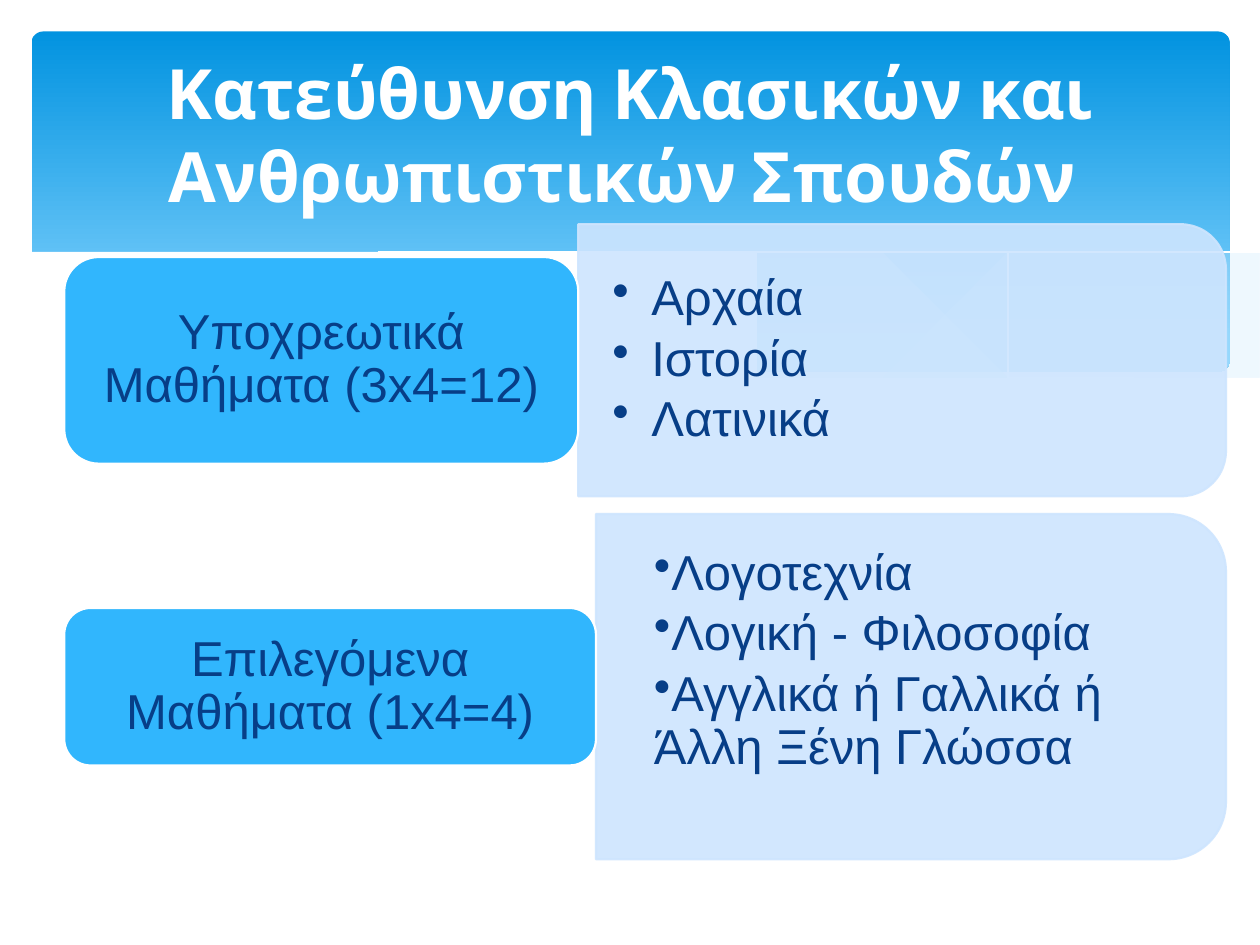
from dataclasses import dataclass

from lxml import etree
from pptx import Presentation
from pptx import util as u
from pptx.dml.color import RGBColor
from pptx.enum import shapes, text
from pptx.oxml.ns import qn

COLUMNS, ROWS = 10, 7.5
CELL = u.Inches(1)
WHITE, NAVY, BLUE, PALE, MIST = "FFFFFF", "073E87", "31B6FD", "CEE5FE", "C6E7FC"
CORNER_INSET = 0.048  # share of a panel's height kept clear of its round corners
LABEL_LEFT = 0.51

Point = tuple[float, float]
Curve = list[Point]


@dataclass
class Wave:
    """Smooth curves joined by straight lines; filled if a fill is given."""
    curves: list[Curve]
    fill: str | None = None
    opacity: int = 100


@dataclass
class Group:
    label: str
    label_height: float
    items: list[str]
    left: float
    top: float
    width: float
    height: float
    margin: float
    hanging: float
    bottom_inset: float = 0.14


WAVES = [
    Wave([[(9.76, 2), (9.21, 2.1), (8.61, 2.23), (7.79, 2.42), (6.61, 2.65)],
          [(6.61, 2.65), (7.19, 2.72), (7.69, 2.77), (8.24, 2.77), (8.72, 2.74),
           (9.21, 2.65), (9.76, 2.47)]], MIST, 29),
    Wave([[(8.93, 2.73), (8.07, 2.6), (7.06, 2.4), (6.29, 2.22), (5.55, 2.05),
           (4.89, 1.94), (4.2, 1.87), (3.61, 1.85), (2.86, 1.91)],
          [(2.86, 1.91), (3.62, 2.03), (4.49, 2.22), (5.3, 2.4), (6.18, 2.58),
           (6.95, 2.7), (7.61, 2.77), (8.28, 2.78), (8.93, 2.73)]], MIST, 40),
    Wave([[(3.09, 1.95), (3.53, 1.89), (4.16, 1.87), (4.89, 1.9), (5.82, 2),
           (6.65, 2.13), (7.6, 2.33), (8.31, 2.51), (9.07, 2.72)]]),
    Wave([[(6.13, 2.57), (6.95, 2.35), (7.76, 2.16), (8.66, 1.99), (9.24, 1.9),
           (9.75, 1.85)]]),
    Wave([[(9.77, 2.46), (9.3, 2.62), (8.75, 2.73), (8.09, 2.77), (7.26, 2.72),
           (6.48, 2.62), (5.55, 2.45), (4.47, 2.2), (3.65, 2.02), (2.92, 1.9),
           (2.3, 1.85), (1.77, 1.84), (1.19, 1.87), (0.67, 1.97), (0.23, 2.13)],
          [(0.23, 3.29), (9.77, 3.29)]], WHITE),
]

GROUPS = [
    Group("Υποχρεωτικά Μαθήματα (3x4=12)", 1.64, ["Αρχαία", "Ιστορία", "Λατινικά"],
          4.59, 1.78, 5.14, 2.16, margin=0.31, hanging=-0.31),
    Group("Επιλεγόμενα Μαθήματα (1x4=4)", 1.25,
          ["Λογοτεχνία", "Λογική - Φιλοσοφία", "Αγγλικά ή Γαλλικά ή Άλλη Ξένη Γλώσσα"],
          4.73, 4.08, 5, 2.74, margin=0.19, hanging=0, bottom_inset=0.54),
]


def cells(*lengths: float) -> list[int]:
    return [round(length * CELL) for length in lengths]


def paint(target, color: str, opacity: int = 100) -> None:
    """Give a fill one colour, see-through below 100."""
    target.solid()
    target.fore_color.rgb = RGBColor.from_string(color)
    if opacity < 100:
        choice = target._xPr.find(qn("a:solidFill"))[0]
        etree.SubElement(choice, qn("a:alpha"), val=str(opacity * 1000))


def smooth(curve: Curve, steps: int = 5) -> Curve:
    """Sample a Catmull-Rom spline through the points of a curve."""
    if len(curve) < 3:
        return curve
    padded = [curve[0], *curve, curve[-1]]
    samples = [curve[0]]
    for a, b, c, d in zip(padded, padded[1:], padded[2:], padded[3:]):
        for step in range(1, steps + 1):
            t = step / steps
            samples.append(tuple(
                b[i] + t / 2 * (c[i] - a[i]
                                + t * (2 * a[i] - 5 * b[i] + 4 * c[i] - d[i])
                                + t * t * (3 * b[i] - a[i] - 3 * c[i] + d[i]))
                for i in range(2)))
    return samples


def draw_wave(page, wave: Wave) -> None:
    points = [point for curve in wave.curves for point in smooth(curve)]
    builder = page.shapes.build_freeform(*points[0], scale=CELL)
    builder.add_line_segments(points[1:], close=wave.fill is not None)
    shape = builder.convert_to_shape()
    shape.shadow.inherit = False
    if wave.fill:
        paint(shape.fill, wave.fill, wave.opacity)
        shape.line.fill.background()
    else:
        shape.fill.background()
        paint(shape.line.fill, WHITE)
        shape.line.width = u.Pt(0)


def draw_banner(page) -> None:
    banner = page.shapes.add_shape(shapes.MSO_SHAPE.ROUNDED_RECTANGLE,
                                   *cells(0.25, 0.25, 9.51, 2.7))
    banner.adjustments[0] = 0.034
    banner.shadow.inherit = False
    banner.line.fill.background()
    banner.fill.gradient()
    banner.fill.gradient_angle = 270
    for stop, (position, color) in zip(banner.fill.gradient_stops,
                                       [(0, "0293E0"), (0.9, "83D3FE")]):
        stop.position = position
        stop.color.rgb = RGBColor.from_string(color)


def set_frame(frame, left: float, top: float, right: float, bottom: float) -> None:
    frame.word_wrap = True
    frame.auto_size = text.MSO_AUTO_SIZE.NONE
    frame.vertical_anchor = text.MSO_ANCHOR.MIDDLE
    (frame.margin_left, frame.margin_top,
     frame.margin_right, frame.margin_bottom) = cells(left, top, right, bottom)


def set_paragraph(para, words: str, space_after: float) -> None:
    para.text = words
    para.line_spacing = 0.9
    para.space_after = u.Pt(space_after)
    para.font.name = "Arial"
    para.font.size = u.Pt(28)
    para.font.color.rgb = RGBColor.from_string(NAVY)


def draw_block(page, kind, box: list[int], color: str, edge: str, opacity: int = 100):
    block = page.shapes.add_shape(kind, *box)
    block.shadow.inherit = False
    paint(block.fill, color, opacity)
    paint(block.line.fill, edge, opacity)
    block.line.width = u.Pt(1.25)
    return block


def draw_items(page, group: Group) -> None:
    inset = CORNER_INSET * group.height
    box = page.shapes.add_textbox(*cells(group.left, group.top + inset,
                                         group.width - inset, group.height - 2 * inset))
    frame = box.text_frame
    set_frame(frame, 0.27, 0.14, 0.27, group.bottom_inset)
    for index, item in enumerate(group.items):
        para = frame.add_paragraph() if index else frame.paragraphs[0]
        set_paragraph(para, item, 4.2)
        para.level = 1
        properties = para._p.get_or_add_pPr()
        margin, hanging = cells(group.margin, group.hanging)
        properties.set("marL", str(margin))
        properties.set("indent", str(hanging))
        bullet = etree.Element(qn("a:buChar"), char="•")
        properties.find(qn("a:spcAft")).addnext(bullet)


def draw_group(page, group: Group) -> None:
    middle_x = group.left + group.width / 2
    middle_y = group.top + group.height / 2
    upright = cells(middle_x - group.height / 2, middle_y - group.width / 2,
                    group.height, group.width)
    panel = draw_block(page, shapes.MSO_SHAPE.ROUND_2_SAME_RECTANGLE, upright,
                       PALE, PALE, 90)
    panel.rotation = 90
    draw_items(page, group)

    box = cells(LABEL_LEFT, middle_y - group.label_height / 2,
                group.left - LABEL_LEFT, group.label_height)
    label = draw_block(page, shapes.MSO_SHAPE.ROUNDED_RECTANGLE, box, BLUE, WHITE)
    set_frame(label.text_frame, 0.12, 0.06, 0.12, 0.06)
    para = label.text_frame.paragraphs[0]
    set_paragraph(para, group.label, 0)
    para.alignment = text.PP_ALIGN.CENTER


def place_title(page, words: str) -> None:
    title = page.shapes.title
    title.left, title.top, title.width, title.height = cells(0.5, 0.37, 9, 1.37)
    set_frame(title.text_frame, 0.1, 0.05, 0.1, 0.05)
    para = title.text_frame.paragraphs[0]
    para.text = words
    para.alignment = text.PP_ALIGN.CENTER
    para.font.name, para.font.size, para.font.bold = "Cabin", u.Pt(39.6), True
    para.font.color.rgb = RGBColor.from_string(WHITE)
    page.shapes._spTree.append(title._element)  # in front of the banner


def main() -> None:
    deck = Presentation()
    deck.slide_width, deck.slide_height = cells(COLUMNS, ROWS)
    page = deck.slides.add_slide(deck.slide_layouts.get_by_name("Title Only"))
    draw_banner(page)
    for wave in WAVES:
        draw_wave(page, wave)
    place_title(page, "Κατεύθυνση Κλασικών και Ανθρωπιστικών Σπουδών ")
    for group in GROUPS:
        draw_group(page, group)
    deck.save("out.pptx")


if __name__ == "__main__":
    main()
